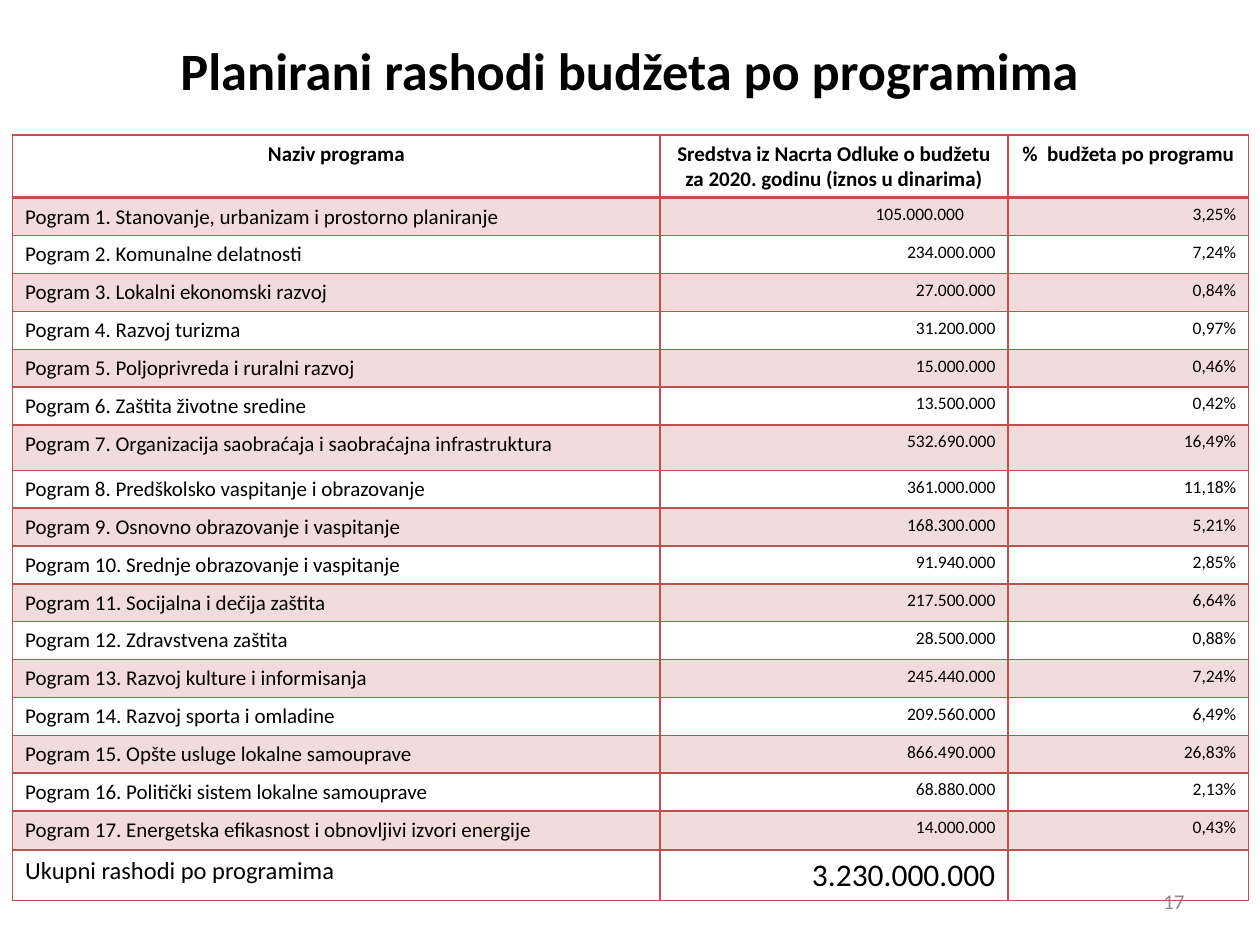
import pptx
import pptx.dml.color
import pptx.enum.text
import pptx.oxml.ns
import pptx.util
from lxml import etree

Inches = pptx.util.Inches
ALIGN = pptx.enum.text.PP_ALIGN
MIDDLE = pptx.enum.text.MSO_ANCHOR.MIDDLE

# Content
TITLE = "Planirani rashodi budžeta po programima"
PAGE_NUMBER = "17"
HEADERS = (
    "Naziv programa",
    "Sredstva iz Nacrta Odluke o budžetu za 2020. godinu (iznos u dinarima)",
    "%  budžeta po programu",
)
PROGRAMS = [
    ("Stanovanje, urbanizam i prostorno planiranje", "105.000.000", "3,25%"),
    ("Komunalne delatnosti", "234.000.000", "7,24%"),
    ("Lokalni ekonomski razvoj", "27.000.000", "0,84%"),
    ("Razvoj turizma", "31.200.000", "0,97%"),
    ("Poljoprivreda i ruralni razvoj", "15.000.000", "0,46%"),
    ("Zaštita životne sredine", "13.500.000", "0,42%"),
    ("Organizacija saobraćaja i saobraćajna infrastruktura", "532.690.000", "16,49%"),
    ("Predškolsko vaspitanje i obrazovanje", "361.000.000", "11,18%"),
    ("Osnovno obrazovanje i vaspitanje", "168.300.000", "5,21%"),
    ("Srednje obrazovanje i vaspitanje", "91.940.000", "2,85%"),
    ("Socijalna i dečija zaštita", "217.500.000", "6,64%"),
    ("Zdravstvena zaštita", "28.500.000", "0,88%"),
    ("Razvoj kulture i informisanja", "245.440.000", "7,24%"),
    ("Razvoj sporta i omladine", "209.560.000", "6,49%"),
    ("Opšte usluge lokalne samouprave", "866.490.000", "26,83%"),
    ("Politički sistem lokalne samouprave", "68.880.000", "2,13%"),
    ("Energetska efikasnost i obnovljivi izvori energije", "14.000.000", "0,43%"),
]
TOTAL = ("Ukupni rashodi po programima", "3.230.000.000", "")

# Style
FONT = "Calibri"
COLORS = {"text": "000000", "accent": "C0504D", "number": "8C8C8C"}
BAND_OPACITY = 20
COLUMN_WIDTHS = (5.14, 2.76, 1.91)
ROW_HEIGHT = 0.29
SPECIAL_HEIGHTS = {0: 0.49, 7: 0.36, 17: 0.31, 18: 0.39}


def write(text_frame, text, size, alignment, color="text", bold=False):
    paragraph = text_frame.paragraphs[0]
    paragraph.alignment = alignment
    if not text:
        return
    run = paragraph.add_run()
    run.text = text
    run.font.name = FONT
    run.font.size = pptx.util.Pt(size)
    run.font.bold = bold
    run.font.color.rgb = pptx.dml.color.RGBColor.from_string(COLORS[color])


def add_solid_fill(parent, opacity=100):
    fill = etree.SubElement(parent, pptx.oxml.ns.qn("a:solidFill"))
    color = etree.SubElement(fill, pptx.oxml.ns.qn("a:srgbClr"), val=COLORS["accent"])
    if opacity < 100:
        etree.SubElement(color, pptx.oxml.ns.qn("a:alpha"), val=str(opacity * 1000))


def style_cell(cell, row):
    properties = cell._tc.get_or_add_tcPr()
    for side in "LRTB":
        # The rule between the header and the first program is heavier
        heavy = (row, side) in ((0, "B"), (1, "T"))
        width = pptx.util.Pt(2 if heavy else 1)
        line = etree.SubElement(properties, pptx.oxml.ns.qn("a:ln" + side), w=str(width))
        add_solid_fill(line)
    if row % 2:
        add_solid_fill(properties, BAND_OPACITY)
    else:
        cell.fill.background()


def add_program_table(slide):
    names = [(f"Pogram {number}. {name}", amount, share)
             for number, (name, amount, share) in enumerate(PROGRAMS, 1)]
    rows = [HEADERS, *names, TOTAL]
    frame = slide.shapes.add_table(len(rows), len(HEADERS), Inches(0.1), Inches(1.07),
                                   Inches(9.8), Inches(6.07))
    table = frame.table
    table.first_row = table.horz_banding = False
    for column, width in zip(table.columns, COLUMN_WIDTHS):
        column.width = Inches(width)
    for row, values in enumerate(rows):
        table.rows[row].height = Inches(SPECIAL_HEIGHTS.get(row, ROW_HEIGHT))
        header = row == 0
        if header:
            sizes = (12, 12, 12)
        elif values is TOTAL:
            sizes = (14, 18, 10)
        else:
            sizes = (12, 10, 10)
        for column, (text, size) in enumerate(zip(values, sizes)):
            cell = table.cell(row, column)
            alignment = ALIGN.CENTER if header else ALIGN.RIGHT if column else ALIGN.LEFT
            write(cell.text_frame, text, size, alignment, bold=header)
            style_cell(cell, row)
    # The first amount is set in from the right edge
    table.cell(1, 1).margin_right = Inches(0.35)


def main():
    presentation = pptx.Presentation()
    presentation.slide_width, presentation.slide_height = Inches(10), Inches(7.5)
    slide = presentation.slides.add_slide(presentation.slide_layouts[5])

    # Title
    title = slide.shapes.title
    title.left, title.top = Inches(0.74), Inches(0.13)
    title.width, title.height = Inches(8.52), Inches(0.85)
    title.text_frame.vertical_anchor = MIDDLE
    write(title.text_frame, TITLE, 30, ALIGN.CENTER, bold=True)

    # Page number
    number_box = slide.shapes.add_textbox(Inches(7.17), Inches(6.95), Inches(2.33), Inches(0.4))
    number_box.text_frame.word_wrap = True
    number_box.text_frame.vertical_anchor = MIDDLE
    write(number_box.text_frame, PAGE_NUMBER, 12, ALIGN.RIGHT, "number")

    # Programs
    add_program_table(slide)
    presentation.save("out.pptx")


if __name__ == "__main__":
    main()
